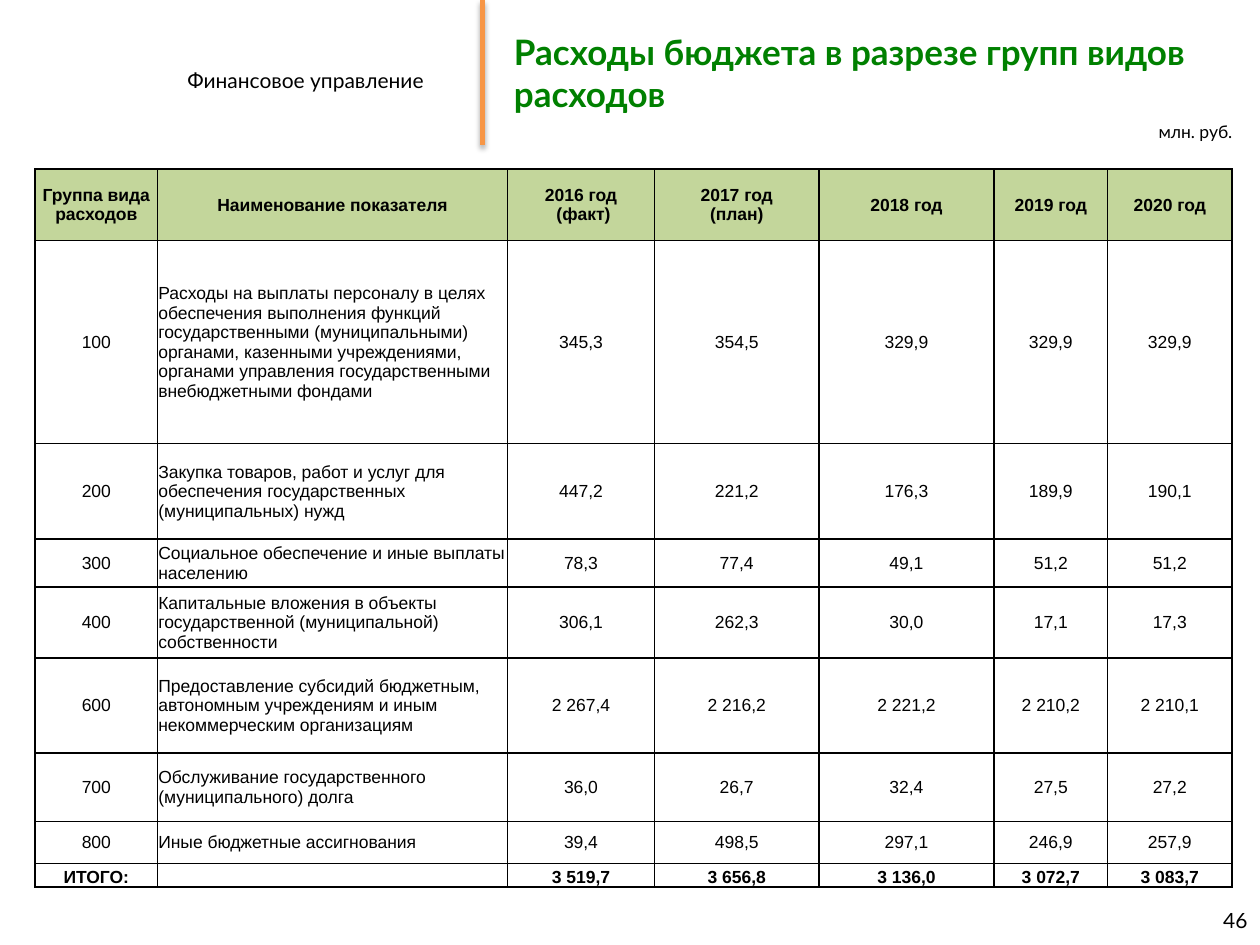
from lxml.etree import SubElement
from pptx import Presentation
from pptx.dml.color import RGBColor
from pptx.enum.shapes import MSO_CONNECTOR
from pptx.enum.text import MSO_ANCHOR as Anchor, MSO_AUTO_SIZE as AutoSize, PP_ALIGN as Align
from pptx.oxml.ns import qn
from pptx.util import Pt

BLACK = RGBColor(0x00, 0x00, 0x00)
GREEN = RGBColor(0x00, 0x80, 0x00)
ORANGE = RGBColor(0xF7, 0x96, 0x46)
HEADER_FILL = RGBColor(0xC3, 0xD6, 0x9B)

COLUMN_WIDTHS = [70, 200, 84, 94, 100, 65, 71]
ROW_HEIGHTS = [41, 116, 54.5, 27.5, 40.5, 54.5, 39, 24, 13.5]
NAME_COLUMN = 1
EXPENSES = [
    ["Группа вида расходов", "Наименование показателя", "2016 год\v (факт)",
     "2017 год\v(план)", "2018 год", "2019 год", "2020 год"],
    ["100", "Расходы на выплаты персоналу в целях обеспечения выполнения функций "
     "государственными (муниципальными) органами, казенными учреждениями, "
     "органами управления государственными внебюджетными фондами",
     "345,3", "354,5", "329,9", "329,9", "329,9"],
    ["200", "Закупка товаров, работ и услуг для обеспечения государственных "
     "(муниципальных) нужд", "447,2", "221,2", "176,3", "189,9", "190,1"],
    ["300", "Социальное обеспечение и иные выплаты населению",
     "78,3", "77,4", "49,1", "51,2", "51,2"],
    ["400", "Капитальные вложения в объекты государственной (муниципальной) "
     "собственности", "306,1", "262,3", "30,0", "17,1", "17,3"],
    ["600", "Предоставление субсидий бюджетным, автономным учреждениям и иным "
     "некоммерческим организациям",
     "2 267,4", "2 216,2", "2 221,2", "2 210,2", "2 210,1"],
    ["700", "Обслуживание государственного (муниципального) долга",
     "36,0", "26,7", "32,4", "27,5", "27,2"],
    ["800", "Иные бюджетные ассигнования", "39,4", "498,5", "297,1", "246,9", "257,9"],
    ["ИТОГО:", "", "3 519,7", "3 656,8", "3 136,0", "3 072,7", "3 083,7"],
]


def write(frame, text, size=12, font="Lato", color=BLACK, bold=False,
          align=Align.LEFT, spacing=None):
    para = frame.paragraphs[0]
    para.text = text
    para.alignment = align
    if spacing:
        para.line_spacing = spacing
    for span in para.runs:
        span.font.size = Pt(size)
        span.font.name = font
        span.font.bold = bold
        span.font.color.rgb = color
    # Line breaks and empty paragraphs need the size too, or they stretch the row.
    for line_break in para._p.findall(qn("a:br")):
        SubElement(line_break, qn("a:rPr"), sz=str(size * 100))
    if not text:
        SubElement(para._p, qn("a:endParaRPr"), sz=str(size * 100))


def add_borders(cell, width=1):
    properties = cell._tc.get_or_add_tcPr()
    for position, side in enumerate(("lnL", "lnR", "lnT", "lnB")):
        line = properties.makeelement(qn(f"a:{side}"), {"w": str(Pt(width))})
        fill = SubElement(line, qn("a:solidFill"))
        SubElement(fill, qn("a:srgbClr"), val=str(BLACK))
        properties.insert(position, line)


class BudgetSlide:
    def __init__(self, deck):
        self.page = deck.slides.add_slide(deck.slide_layouts[5])

    def title(self, text, left, top, width, height):
        box = self.page.shapes.title
        box.left, box.top, box.width, box.height = map(Pt, (left, top, width, height))
        frame = box.text_frame
        frame.auto_size = AutoSize.NONE
        frame.vertical_anchor = Anchor.MIDDLE
        write(frame, text, size=20, color=GREEN, bold=True)

    def label(self, text, left, top, width, height, wrap=False, anchor=Anchor.TOP, **style):
        box = self.page.shapes.add_textbox(*map(Pt, (left, top, width, height)))
        frame = box.text_frame
        frame.word_wrap = wrap
        frame.auto_size = AutoSize.NONE if wrap else AutoSize.SHAPE_TO_FIT_TEXT
        frame.vertical_anchor = anchor
        write(frame, text, **style)

    def divider(self, x, top, bottom):
        """Vertical rule with a soft shadow below it."""
        line = self.page.shapes.add_connector(
            MSO_CONNECTOR.STRAIGHT, Pt(x), Pt(top), Pt(x), Pt(bottom))
        line.line.color.rgb = ORANGE
        line.line.width = Pt(3)
        effects = SubElement(line._element.spPr, qn("a:effectLst"))
        shadow = SubElement(effects, qn("a:outerShdw"), blurRad=str(Pt(3.1)),
                            dist=str(Pt(1.8)), dir="5400000", rotWithShape="0")
        color = SubElement(shadow, qn("a:srgbClr"), val=str(BLACK))
        SubElement(color, qn("a:alpha"), val="35000")

    def table(self, rows, left, top, widths, heights):
        table = self.page.shapes.add_table(
            len(rows), len(widths), Pt(left), Pt(top),
            Pt(sum(widths)), Pt(sum(heights))).table
        table.horz_banding = False
        for column, width in zip(table.columns, widths):
            column.width = Pt(width)
        last = len(rows) - 1
        for r, values in enumerate(rows):
            table.rows[r].height = Pt(heights[r])
            for c, value in enumerate(values):
                cell = table.cell(r, c)
                cell.margin_left = cell.margin_right = cell.margin_top = Pt(0.5)
                cell.margin_bottom = 0
                cell.vertical_anchor = Anchor.BOTTOM if r == last else Anchor.MIDDLE
                if r == 0:
                    cell.fill.solid()
                    cell.fill.fore_color.rgb = HEADER_FILL
                else:
                    cell.fill.background()
                add_borders(cell)
                is_name = c == NAME_COLUMN and r > 0
                write(cell.text_frame, value, size=10, font="Arial",
                      bold=r in (0, last), align=Align.LEFT if is_name else Align.CENTER)


def main():
    deck = Presentation()
    deck.slide_width, deck.slide_height = Pt(720), Pt(540)
    slide = BudgetSlide(deck)
    slide.label("Финансовое управление", 100, 28, 151, 26, spacing=1.5)
    slide.divider(275.75, 0, 83)
    slide.title("Расходы бюджета в разрезе групп видов расходов", 286.5, 0, 433.5, 83)
    slide.label("46", 552, 511, 168, 29, wrap=True, anchor=Anchor.MIDDLE, align=Align.RIGHT)
    slide.label("млн. руб.", 655, 65.5, 57.5, 19.5, size=10)
    slide.table(EXPENSES, 20, 96.5, COLUMN_WIDTHS, ROW_HEIGHTS)
    deck.save("out.pptx")


if __name__ == "__main__":
    main()
